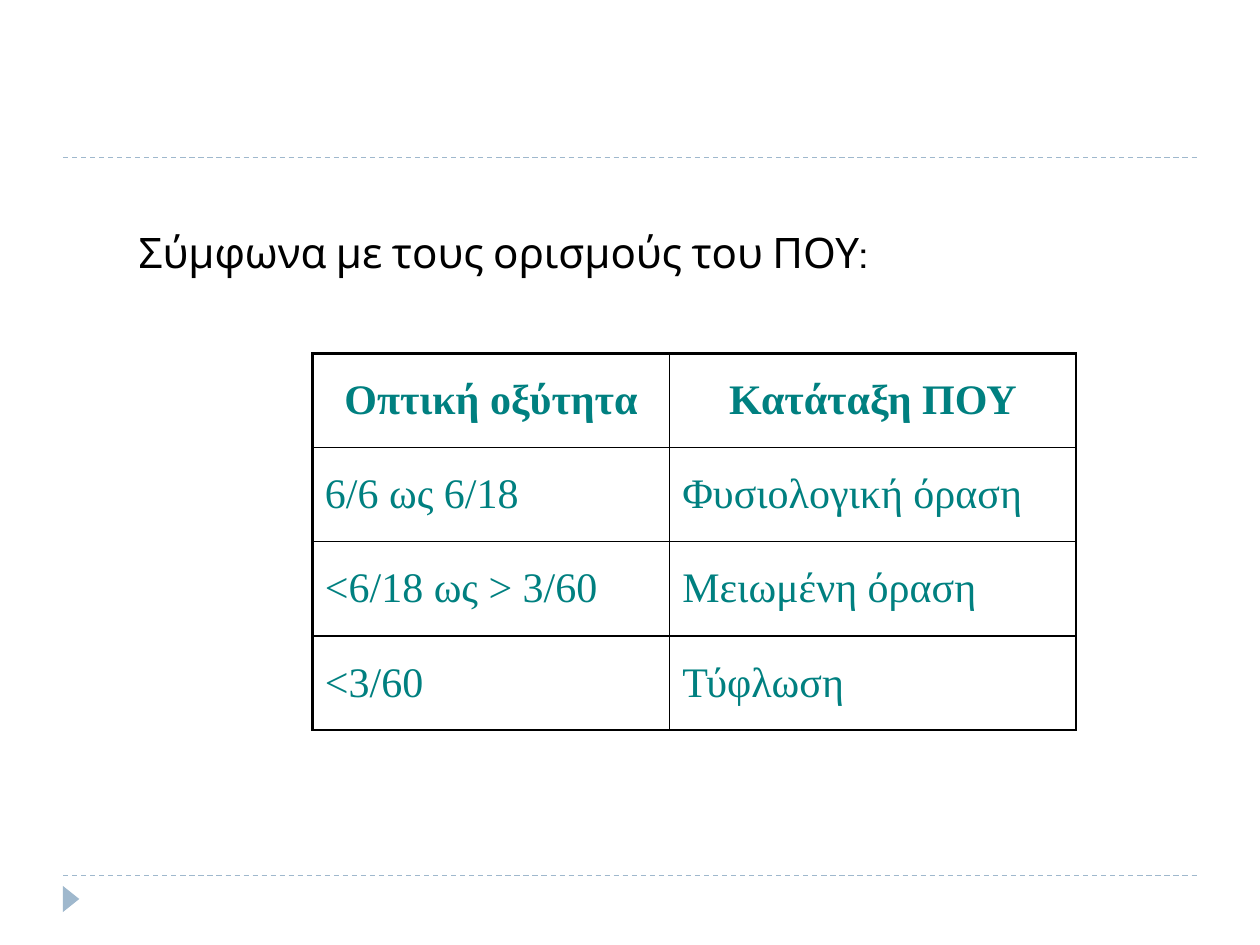
"""Build a slide with the WHO definitions of visual acuity in a table."""
from lxml import etree
from pptx import Presentation
from pptx import util as u
from pptx.dml.color import RGBColor
from pptx.enum import dml, shapes, text
from pptx.oxml.ns import qn

COLORS = {"accent": "9FB8CD", "body": "000000", "border": "000000", "table": "008080"}
ROWS = [
    ("Οπτική οξύτητα", "Κατάταξη ΠΟΥ"),
    ("6/6 ως 6/18", "Φυσιολογική όραση"),
    ("<6/18 ως > 3/60", "Μειωμένη όραση"),
    ("<3/60", "Τύφλωση"),
]


def color(name):
    """Return the named colour."""
    return RGBColor.from_string(COLORS[name])


class SlideBuilder:
    """Hold the style and the current slide."""

    body_font = "Cabin"
    table_font = "Times New Roman"
    text_size = u.Pt(24)
    thin, thick = u.Pt(1), u.Pt(1.5)

    def __init__(self, presentation):
        self.slide = presentation.slides.add_slide(presentation.slide_layouts[1])
        title = self.slide.shapes.title.element
        title.getparent().remove(title)

    def style(self, paragraph, font_name, color_name, indent, bold=False):
        """Set the font and the hanging indent of a paragraph."""
        font = paragraph.font
        font.name, font.size, font.bold = font_name, self.text_size, bold
        font.color.rgb = color(color_name)
        properties = paragraph._p.get_or_add_pPr()
        properties.set("marL", str(u.Pt(indent)))
        properties.set("indent", str(-u.Pt(indent)))

    def rule(self, y):
        """Draw a dashed rule across the slide."""
        line = self.slide.shapes.add_connector(
            shapes.MSO_CONNECTOR.STRAIGHT, u.Pt(36), u.Pt(y), u.Pt(684), u.Pt(y))
        line.line.color.rgb = color("accent")
        line.line.width = u.Pt(0.75)
        line.line.dash_style = dml.MSO_LINE.DASH
        etree.SubElement(line._element.spPr, qn("a:effectLst"))

    def marker(self, left, top, width, height):
        """Draw a triangle that points right."""
        shape = self.slide.shapes.add_shape(
            shapes.MSO_SHAPE.ISOSCELES_TRIANGLE, *map(u.Pt, (left, top, width, height)))
        shape.rotation = 90
        shape.shadow.inherit = False
        shape.fill.solid()
        shape.fill.fore_color.rgb = color("accent")
        shape.line.fill.background()

    def body(self, wording, left, top, width, height):
        """Fill the body placeholder with one unbulleted paragraph."""
        shape = self.slide.placeholders[1]
        shape.left, shape.top, shape.width, shape.height = map(
            u.Pt, (left, top, width, height))
        paragraph = shape.text_frame.paragraphs[0]
        paragraph.text = wording
        paragraph.space_before = u.Pt(6)
        self.style(paragraph, self.body_font, "body", 21.6)
        etree.SubElement(paragraph._p.get_or_add_pPr(), qn("a:buNone"))

    def border(self, cell, side, width):
        """Draw one border of a cell."""
        line = etree.SubElement(
            cell._tc.get_or_add_tcPr(), qn(f"a:ln{side}"), w=str(width))
        fill = etree.SubElement(line, qn("a:solidFill"))
        etree.SubElement(fill, qn("a:srgbClr"), val=COLORS["border"])

    def table(self, rows, left, top, widths, row_height):
        """Add a table with a thick outline and a bold, centred first row."""
        last_row, last_column = len(rows) - 1, len(widths) - 1
        table = self.slide.shapes.add_table(
            len(rows), len(widths), u.Pt(left), u.Pt(top),
            u.Pt(sum(widths)), u.Pt(row_height * len(rows))).table
        table.first_row = table.horz_banding = False
        for column, width in zip(table.columns, widths):
            column.width = u.Pt(width)
        for i, row in enumerate(rows):
            table.rows[i].height = u.Pt(row_height)
            for j, wording in enumerate(row):
                cell = table.cell(i, j)
                cell.vertical_anchor = text.MSO_ANCHOR.MIDDLE
                outer = {"L": j == 0, "R": j == last_column,
                         "T": i == 0, "B": i == last_row}
                for side, is_outer in outer.items():
                    self.border(cell, side, self.thick if is_outer else self.thin)
                cell.fill.background()
                paragraph = cell.text_frame.paragraphs[0]
                paragraph.text = wording
                paragraph.alignment = text.PP_ALIGN.CENTER if i == 0 else text.PP_ALIGN.LEFT
                self.style(paragraph, self.table_font, "table", 27, bold=i == 0)


def main():
    """Build and save the presentation."""
    presentation = Presentation()
    presentation.slide_width, presentation.slide_height = u.Pt(720), u.Pt(540)
    builder = SlideBuilder(presentation)
    for y in (500.4, 90):
        builder.rule(y)
    builder.marker(33.1, 509, 15, 9.4)
    builder.body("Σύμφωνα με τους ορισμούς του ΠΟΥ:", 72, 126, 481, 81.4)
    builder.table(ROWS, 178.5, 202, (204.2, 232.4), 53.8)
    presentation.save("out.pptx")


if __name__ == "__main__":
    main()
